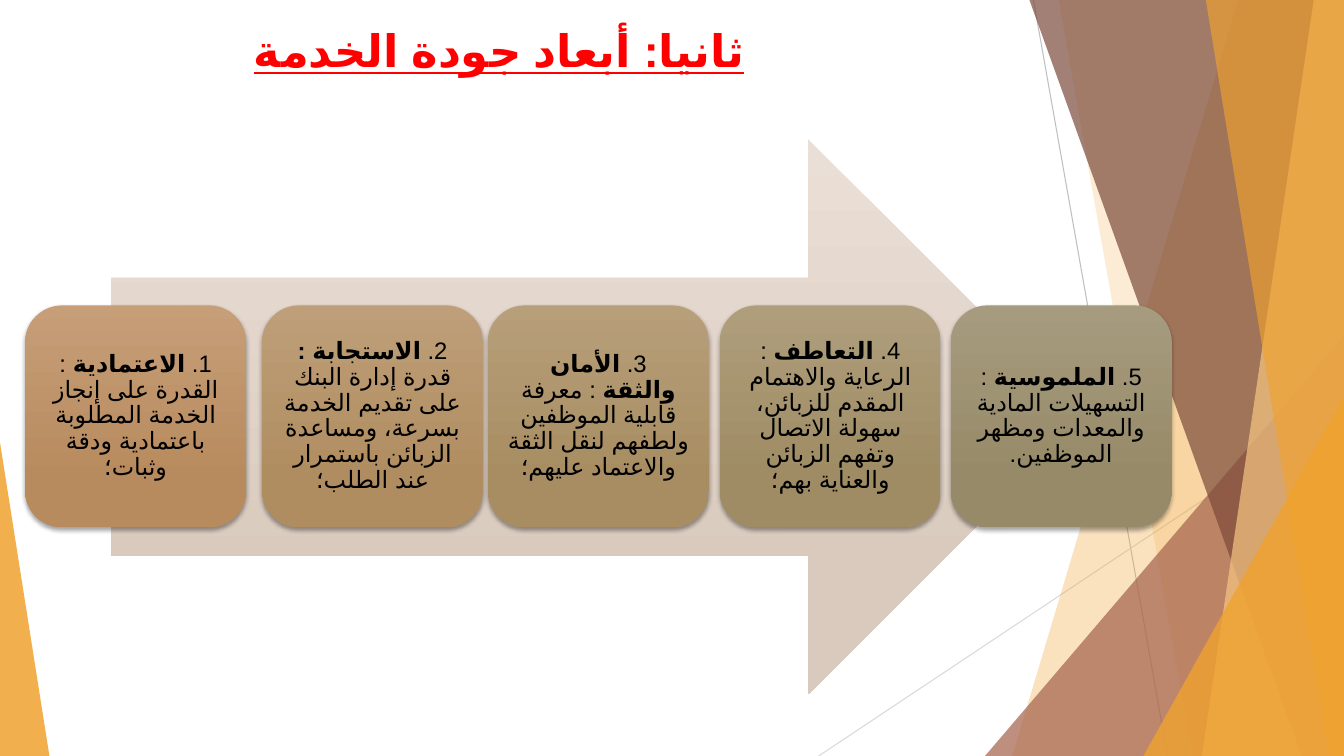
from lxml.etree import SubElement
from pptx import Presentation
from pptx.dml.color import RGBColor
from pptx.enum.lang import MSO_LANGUAGE_ID
from pptx.enum.shapes import MSO_CONNECTOR, MSO_SHAPE
from pptx.enum.text import MSO_ANCHOR, PP_ALIGN
from pptx.oxml.ns import qn
from pptx.util import Inches, Pt

WHITE = RGBColor(0xFF, 0xFF, 0xFF)
BLACK = RGBColor(0x00, 0x00, 0x00)
RED = RGBColor(0xFF, 0x00, 0x00)
ORANGE = RGBColor(0xF0, 0xA2, 0x2E)
PEACH = RGBColor(0xF6, 0xC7, 0x82)
RUST = RGBColor(0xA5, 0x64, 0x4E)
BROWN = RGBColor(0x7C, 0x4B, 0x3B)
GREY = RGBColor(0xBF, 0xBF, 0xBF)
PALE_GREY = RGBColor(0xD9, 0xD9, 0xD9)
ARROW_TOP = RGBColor(0xEA, 0xDF, 0xD6)
ARROW_BOTTOM = RGBColor(0xDA, 0xCA, 0xBE)

WIDTH, HEIGHT = Inches(13.33), Inches(7.5)


def paint(shape, top_colour, bottom_colour=None, opacity=100):
    """Fill with a vertical gradient, or one colour at an opacity in percent."""
    shape.shadow.inherit = False
    shape.line.fill.background()
    if bottom_colour is None:
        shape.fill.solid()
        shape.fill.fore_color.rgb = top_colour
        rgb = shape.fill._xPr.find(qn("a:solidFill"))[0]
        SubElement(rgb, qn("a:alpha"), val=str(opacity * 1000))
    else:
        shape.fill.gradient()
        shape.fill.gradient_angle = 270
        first, last = shape.fill.gradient_stops
        first.position, first.color.rgb = 0, top_colour
        last.position, last.color.rgb = 0.78, bottom_colour


def set_arabic(paragraph, font_name, size, colour):
    """Centre right-to-left text and set its Latin and Arabic fonts."""
    paragraph.alignment = PP_ALIGN.CENTER
    paragraph._p.get_or_add_pPr().set("rtl", "1")
    font = paragraph.font
    font.name, font.size, font.color.rgb = font_name, Pt(size), colour
    font.language_id = MSO_LANGUAGE_ID.ARABIC
    SubElement(font._element, qn("a:cs"), typeface="Arial")


deck = Presentation()
deck.slide_width, deck.slide_height = WIDTH, HEIGHT
slide = deck.slides.add_slide(deck.slide_layouts[5])
slide.background.fill.solid()
slide.background.fill.fore_color.rgb = WHITE
shapes = slide.shapes

# Title
title = shapes.title
title.left, title.top, title.width, title.height = map(Inches, (0.25, 0.18, 9.4, 0.95))
title.text_frame.vertical_anchor = MSO_ANCHOR.TOP
heading = title.text_frame.paragraphs[0]
heading.text = "ثانيا: أبعاد جودة الخدمة"
set_arabic(heading, "Arial", 32, RED)
heading.font.bold = heading.font.underline = True

# Thin lines behind the facets
for colour, *ends in [(GREY, 10.25, 0, 11.58, 7.5), (PALE_GREY, 13.33, 4.03, 8.12, 7.5)]:
    ray = shapes.add_connector(MSO_CONNECTOR.STRAIGHT, *map(Inches, ends))
    ray.line.color.rgb, ray.line.width = colour, Pt(0.75)
    SubElement(ray._element.spPr, qn("a:effectLst"))

# Facets reach the right edge: full-height bands have a top x, triangles a top y
facets = [
    ("band", 12.28, 10.04, ORANGE, 30),
    ("band", 10.5, 11.83, ORANGE, 20),
    ("triangle", 3.33, 9.77, RUST, 72),
    ("band", 10.21, 12.91, BROWN, 70),
    ("band", 13.03, 11.92, PEACH, 70),
    ("band", 11.96, 13.18, ORANGE, 65),
    ("triangle", 3.93, 11.34, ORANGE, 80),
]
for form, top, bottom_x, colour, opacity in facets:
    top, bottom_x = Inches(top), Inches(bottom_x)
    if form == "band":
        outline = shapes.build_freeform(top, 0)
        outline.add_line_segments([(WIDTH, 0), (WIDTH, HEIGHT), (bottom_x, HEIGHT)])
        facet = outline.convert_to_shape()
    else:
        facet = shapes.add_shape(MSO_SHAPE.ISOSCELES_TRIANGLE, bottom_x, top,
                                 WIDTH - bottom_x, HEIGHT - top)
        facet.adjustments[0] = 1
    paint(facet, colour, opacity=opacity)

left_wedge = shapes.add_shape(MSO_SHAPE.ISOSCELES_TRIANGLE, 0, Inches(4.39),
                              Inches(0.49), HEIGHT - Inches(4.39))
left_wedge.adjustments[0] = 0
paint(left_wedge, ORANGE, opacity=85)

# Arrow behind the five dimensions
arrow = shapes.add_shape(MSO_SHAPE.RIGHT_ARROW, *map(Inches, (1.1, 1.38, 9.67, 5.51)))
paint(arrow, ARROW_TOP, ARROW_BOTTOM)

# Cards: left, gradient colours, name, explanation
dimensions = [
    (0.25, RGBColor(0xC6, 0x9E, 0x78), RGBColor(0xB8, 0x8B, 0x5E), "الاعتمادية ",
     ": القدرة على إنجاز الخدمة المطلوبة باعتمادية ودقة وثبات؛"),
    (2.6, RGBColor(0xBE, 0x9F, 0x79), RGBColor(0xB0, 0x8D, 0x60), "الاستجابة : ",
     "قدرة إدارة البنك على تقديم الخدمة بسرعة، ومساعدة الزبائن باستمرار عند الطلب؛"),
    (4.84, RGBColor(0xB7, 0x9F, 0x7A), RGBColor(0xA8, 0x8D, 0x62), "الأمان والثقة ",
     ": معرفة قابلية الموظفين ولطفهم لنقل الثقة والاعتماد عليهم؛"),
    (7.14, RGBColor(0xAF, 0x9E, 0x7C), RGBColor(0x9F, 0x8C, 0x64), "التعاطف ",
     ": الرعاية والاهتمام المقدم للزبائن، سهولة الاتصال وتفهم الزبائن والعناية بهم؛"),
    (9.43, RGBColor(0xA6, 0x9B, 0x7E), RGBColor(0x96, 0x8A, 0x68), "الملموسية ",
     ": التسهيلات المادية والمعدات ومظهر الموظفين."),
]
for number, (left, top_colour, bottom_colour, name, explanation) in enumerate(dimensions, 1):
    card = shapes.add_shape(MSO_SHAPE.ROUNDED_RECTANGLE,
                            *map(Inches, (left, 3.03, 2.19, 2.2)))
    paint(card, top_colour, bottom_colour)
    shadow = SubElement(card._element.spPr.find(qn("a:effectLst")), qn("a:outerShdw"),
                        blurRad=str(Pt(3)), dist=str(Pt(2)), dir="5400000", rotWithShape="0")
    shadow_colour = SubElement(shadow, qn("a:srgbClr"), val=str(BLACK))
    SubElement(shadow_colour, qn("a:alpha"), val="35000")

    frame = card.text_frame
    frame.word_wrap = True
    frame.vertical_anchor = MSO_ANCHOR.MIDDLE
    frame.margin_left = frame.margin_right = Inches(0.07)
    frame.margin_top = frame.margin_bottom = Inches(0.07)
    dimension = frame.paragraphs[0]
    dimension.line_spacing = 0.9
    set_arabic(dimension, "Cabin", 17, BLACK)
    for words, bold in [(f"{number}. ", False), (name, True), (explanation, False)]:
        run = dimension.add_run()
        run.text, run.font.bold = words, bold

deck.save("out.pptx")
